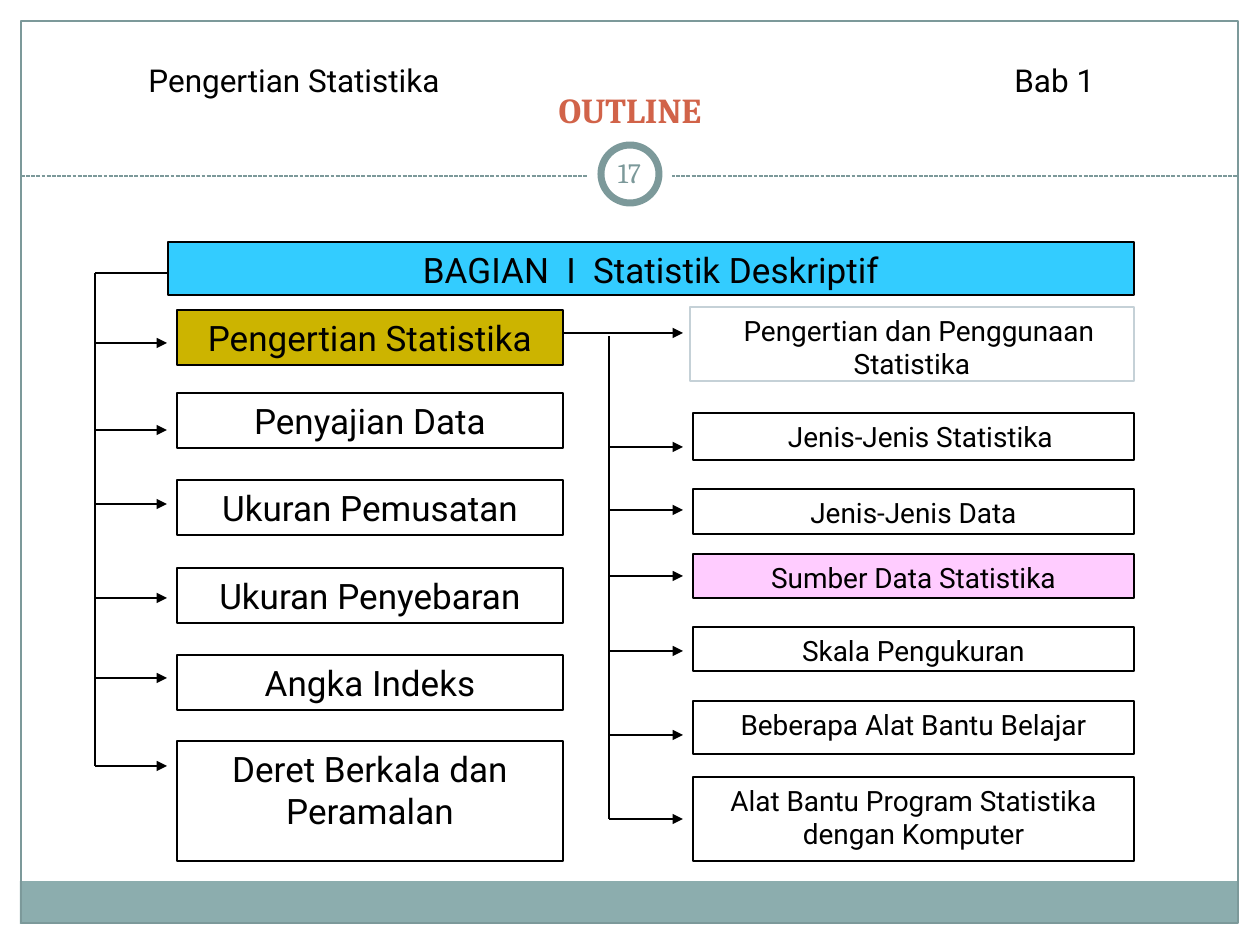
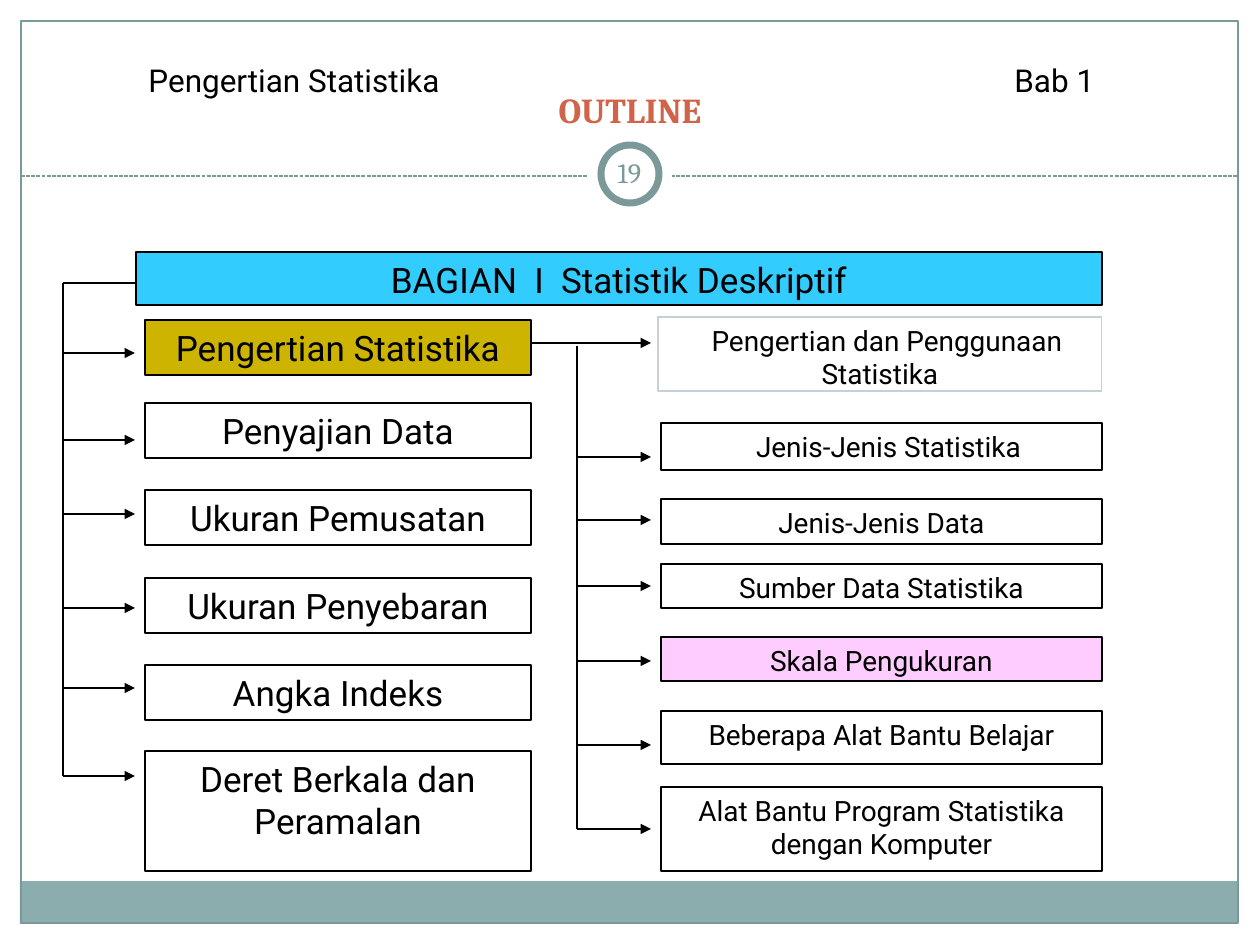
from pptx import Presentation
from pptx.dml.color import RGBColor
from pptx.enum.dml import MSO_LINE
from pptx.enum.shapes import MSO_CONNECTOR as Connector, MSO_SHAPE as Preset
from pptx.enum.text import MSO_ANCHOR as Anchor, MSO_AUTO_SIZE as AutoSize, PP_ALIGN as Align
from pptx.oxml.ns import qn
from pptx.util import Emu, Pt

PX_PER_INCH = 126
SLIDE_WIDTH, SLIDE_HEIGHT = 1260, 945
COLORS = {
    "black": "000000", "white": "FFFFFF", "teal": "7C999A", "band": "8CADAE",
    "title": "D16349", "banner": "33CCFF", "chapter": "CCB400",
    "topic": "FFCCFF", "pale": "C5D1D7",
}
FORMATS = {
    "title": {"name": "Cambria", "size": Pt(20), "bold": True, "color": "title"},
    "number": {"name": "Cambria", "size": Pt(16), "bold": False, "color": "teal"},
    "header": {"name": "Roboto", "size": Pt(18), "color": "black"},
    "chapter": {"name": "Roboto", "size": Pt(20), "color": "black"},
    "topic": {"name": "Roboto", "size": Pt(16), "color": "black"},
}
CHAPTERS = [
    ("Pengertian Statistika", 68, 55, 101),
    ("Penyajian Data", 151, 55, 188),
    ("Ukuran Pemusatan", 238, 55, 262),
    ("Ukuran Penyebaran", 326, 55, 356),
    ("Angka Indeks", 413, 55, 436),
    ("Deret Berkala dan\nPeramalan", 499, 120, 524),
]
FIRST_TOPIC = "Pengertian dan Penggunaan Statistika"
TOPICS = [
    ("Jenis-Jenis Statistika", 171, 47, 205),
    ("Jenis-Jenis Data", 247, 45, 268),
    ("Sumber Data Statistika", 312, 44, 334),
    ("Skala Pengukuran", 385, 44, 409),
    ("Beberapa Alat Bantu Belajar", 459, 53, 493),
    ("Alat Bantu Program Statistika\u0020dengan Komputer", 535, 84, 577),
]
INDENTED_TOPICS = {FIRST_TOPIC, "Jenis-Jenis Statistika"}
OUTLINES = [
    {"number": "17", "left": 95, "top": 242, "current": "Sumber Data Statistika"},
    {"number": "19", "left": 63, "top": 252, "current": "Skala Pengukuran"},
]


def px(length):
    """Turn pixels into EMU."""
    return Emu(round(length * 914400 / PX_PER_INCH))


def rgb(color):
    """Look up a named colour."""
    return RGBColor.from_string(COLORS[color])


def write(shape, text, style, align=Align.CENTER, anchor=Anchor.TOP):
    """Fill a shape with text in one of the shared formats."""
    frame = shape.text_frame
    frame.text = text
    frame.word_wrap = True
    frame.auto_size = AutoSize.NONE
    frame.vertical_anchor = anchor
    for paragraph in frame.paragraphs:
        paragraph.alignment = align
        for run in paragraph.runs:
            for key, value in FORMATS[style].items():
                if key == "color":
                    run.font.color.rgb = rgb(value)
                else:
                    setattr(run.font, key, value)


def add_box(shapes, left, top, width, height, fill=None, line=None, weight=0.75, preset=Preset.RECTANGLE):
    """Add a flat shape with an optional fill and outline."""
    shape = shapes.add_shape(preset, px(left), px(top), px(width), px(height))
    shape.shadow.inherit = False
    if fill:
        shape.fill.solid()
        shape.fill.fore_color.rgb = rgb(fill)
    else:
        shape.fill.background()
    if line:
        shape.line.color.rgb = rgb(line)
        shape.line.width = Pt(weight)
    else:
        shape.line.fill.background()
    return shape


def add_line(shapes, start, end, color="black", arrow=False):
    """Add a thin straight line, with an arrowhead on request."""
    connector = shapes.add_connector(Connector.STRAIGHT, *map(px, (*start, *end)))
    connector.line.color.rgb = rgb(color)
    connector.line.width = Pt(0.75)
    properties = connector._element.spPr
    properties.append(properties.makeelement(qn("a:effectLst"), {}))
    if arrow:
        outline = connector.line._get_or_add_ln()
        outline.append(outline.makeelement(qn("a:tailEnd"), {"type": "triangle"}))
    return connector


def draw_frame(slide, number):
    """Draw the border, bottom band, dashed rule and numbered ring."""
    shapes = slide.shapes
    add_box(shapes, 20, 881, 1217, 43, fill="band")
    add_box(shapes, 21, 21, 1217, 902, line="teal")
    rule = add_line(shapes, (21, 176), (1239, 176), "teal")
    rule.line.dash_style = MSO_LINE.SQUARE_DOT
    center_x, center_y = SLIDE_WIDTH // 2, 174
    for size, line in ((84, None), (58, "teal")):
        add_box(shapes, center_x - size / 2, center_y - size / 2, size, size,
                "white", line, 4, Preset.OVAL)
    label = shapes.add_textbox(px(598), px(142), px(63), px(60))
    write(label, number, "number", anchor=Anchor.MIDDLE)
    for side in ("left", "top", "right", "bottom"):
        setattr(label.text_frame, f"margin_{side}", px(6))


def draw_heading(slide):
    """Place the title and the running header with its tab stop."""
    title = slide.shapes.title
    title.left, title.top, title.width, title.height = map(px, (42, 32, 1176, 105))
    write(title, "OUTLINE", "title", anchor=Anchor.BOTTOM)
    header = slide.shapes.add_textbox(px(136), px(55), px(999), px(50))
    write(header, "Pengertian Statistika\tBab 1", "header", Align.LEFT)
    properties = header.text_frame.paragraphs[0]._p.get_or_add_pPr()
    tabs = properties.makeelement(qn("a:tabLst"), {})
    tabs.append(tabs.makeelement(qn("a:tab"), {"pos": str(px(866)), "algn": "l"}))
    properties.append(tabs)


def draw_chapters(shapes, left, top):
    """Draw the banner and its chapters, hung on a vertical line."""
    banner = add_box(shapes, left + 73, top, 966, 53, "banner", "black")
    write(banner, "BAGIAN  I  Statistik Deskriptif", "chapter")
    for index, (text, offset, height, arrow_y) in enumerate(CHAPTERS):
        fill = "chapter" if index == 0 else None
        box = add_box(shapes, left + 82, top + offset, 386, height, fill, "black")
        write(box, text, "chapter")
        add_line(shapes, (left, top + arrow_y), (left + 72, top + arrow_y), arrow=True)
    add_line(shapes, (left, top + 31), (left, top + CHAPTERS[-1][-1]))
    add_line(shapes, (left, top + 31), (left + 73, top + 31))


def draw_topics(shapes, left, top, current):
    """Draw the topics of the first chapter and mark the current one."""
    spine, tip = left + 514, left + 588
    first = add_box(shapes, left + 595, top + 65, 444, 74, line="pale")
    boxes = [(first, FIRST_TOPIC)]
    add_line(shapes, (left + 468, top + 91), (tip, top + 91), arrow=True)
    for text, offset, height, arrow_y in TOPICS:
        fill = "topic" if text == current else None
        boxes.append((add_box(shapes, left + 598, top + offset, 441, height, fill, "black"), text))
        add_line(shapes, (spine, top + arrow_y), (tip, top + arrow_y), arrow=True)
    add_line(shapes, (spine, top + 94), (spine, top + TOPICS[-1][-1]))
    for box, text in boxes:
        write(box, text, "topic")
        if text in INDENTED_TOPICS:
            properties = box.text_frame.paragraphs[0]._p.get_or_add_pPr()
            properties.set("indent", str(px(14)))


def build_outline(presentation, number, left, top, current):
    """Build one outline slide with its diagram at the given corner."""
    slide = presentation.slides.add_slide(presentation.slide_layouts[5])
    draw_frame(slide, number)
    draw_heading(slide)
    diagram = slide.shapes.add_group_shape().shapes
    draw_chapters(diagram, left, top)
    draw_topics(diagram, left, top, current)


def main():
    """Build and save the presentation."""
    presentation = Presentation()
    presentation.slide_width = px(SLIDE_WIDTH)
    presentation.slide_height = px(SLIDE_HEIGHT)
    for outline in OUTLINES:
        build_outline(presentation, **outline)
    presentation.save("out.pptx")


if __name__ == "__main__":
    main()
